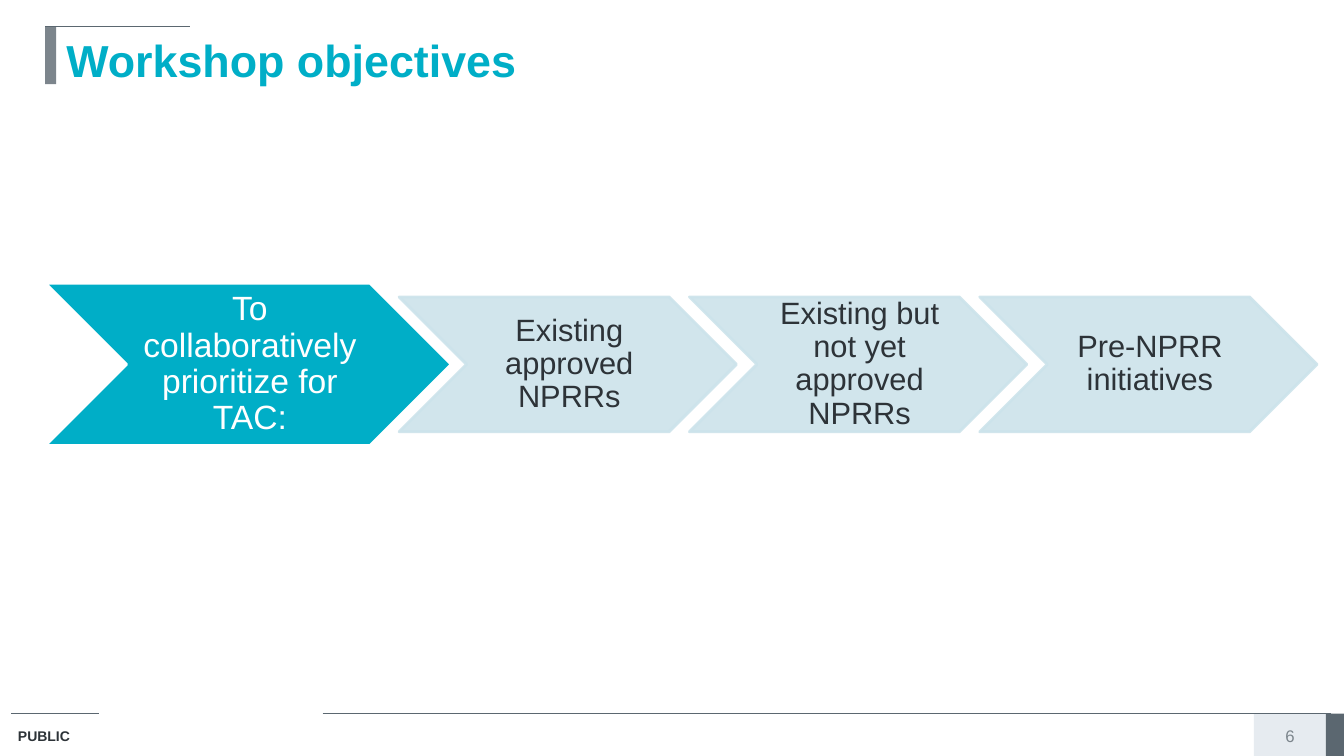
import pptx
import pptx.util
import pptx.dml.color
import pptx.enum.shapes
import pptx.enum.text
import pptx.oxml.ns
import lxml.etree

prs = pptx.Presentation()
prs.slide_width = pptx.util.Inches(13.33)
prs.slide_height = pptx.util.Inches(7.5)
s = prs.slides.add_slide(prs.slide_layouts[6])
COL, ROW = prs.slide_width / 100, prs.slide_height / 100
SHAPE = pptx.enum.shapes.MSO_SHAPE
ALIGN = pptx.enum.text.PP_ALIGN
ANCHOR = pptx.enum.text.MSO_ANCHOR
qn = pptx.oxml.ns.qn


def paint(color_format, color, alpha=100):
    color_format.rgb = pptx.dml.color.RGBColor.from_string(color)
    if alpha < 100:
        for clr in color_format._xFill.iter(qn("a:srgbClr")):
            lxml.etree.SubElement(clr, qn("a:alpha")).set("val", str(alpha * 1000))


def write(sp, text, color, font, align, frame):
    tf = sp.text_frame
    for name, value in {"word_wrap": True, **frame}.items():
        setattr(tf, name, value)
    p = tf.paragraphs[0]
    p.alignment = align
    r = p.add_run()
    r.text = text
    for name, value in {"name": "Arial", **font}.items():
        setattr(r.font, name, value)
    paint(r.font.color, color)
    return p


for x, y, w, h, color in [
    (93.3, 94.4, 5.85, 5.6, "E6EBF0"),
    (98.65, 94.4, 1.35, 5.6, "5B6770"),
    (3.35, 3.55, 0.83, 7.6, "7C858C"),
]:
    sp = s.shapes.add_shape(SHAPE.RECTANGLE, int(x * COL), int(y * ROW), int(w * COL), int(h * ROW))
    sp.shadow.inherit = False
    sp.fill.solid()
    paint(sp.fill.fore_color, color)
    sp.line.fill.background()

for x1, x2, y in [(0.83, 7.35, 94.4), (24, 99, 94.4), (3.35, 14.15, 3.55)]:
    cx = s.shapes.add_connector(
        pptx.enum.shapes.MSO_CONNECTOR.STRAIGHT, int(x1 * COL), int(y * ROW), int(x2 * COL), int(y * ROW)
    )
    cx.line.width = pptx.util.Pt(0.75)
    paint(cx.line.color, "5B6770")
    lxml.etree.SubElement(cx._element.spPr, qn("a:effectLst"))

for text, x, y, w, h, color, size, bold, align, anchor in [
    ("PUBLIC", 0.6, 95.6, 8.35, 3.7, "2D3338", 10, True, ALIGN.LEFT, ANCHOR.TOP),
    ("Workshop objectives", 4.2, 3.7, 93.3, 7.6, "00AEC7", 32, True, ALIGN.LEFT, ANCHOR.TOP),
    ("6", 93.3, 95.75, 5.35, 3.2, "7C858C", 12, False, ALIGN.CENTER, ANCHOR.MIDDLE),
]:
    sp = s.shapes.add_textbox(int(x * COL), int(y * ROW), int(w * COL), int(h * ROW))
    font = {"size": pptx.util.Pt(size), "bold": bold}
    write(sp, text, color, font, align, {"vertical_anchor": anchor})

steps = ["Existing approved NPRRs", "Existing but not yet approved NPRRs", "Pre-NPRR initiatives"]
chevrons = [("To collaboratively prioritize for TAC:", 3.38, 30.2, "00AEC7", "FFFFFF", 100, "FFFFFF", 24)]
for i, text in enumerate(steps):
    chevrons.append((text, 29.7 + 21.6 * i, 25.1, "CCE3EB", "CCE3EB", 90, "2D3338", 22))

frame = {
    "vertical_anchor": ANCHOR.MIDDLE,
    "margin_left": pptx.util.Inches(0.03),
    "margin_right": 0,
    "margin_top": pptx.util.Inches(0.02),
    "margin_bottom": pptx.util.Inches(0.02),
}
for text, x, w, fill, line, alpha, color, size in chevrons:
    width = int(w * COL)
    height = int(0.4 * width)
    sp = s.shapes.add_shape(SHAPE.CHEVRON, int(x * COL), int(48.2 * ROW - height / 2), width, height)
    sp.shadow.inherit = False
    sp.fill.solid()
    paint(sp.fill.fore_color, fill, alpha)
    sp.line.width = pptx.util.Pt(2)
    paint(sp.line.color, line, alpha)
    p = write(sp, text, color, {"size": pptx.util.Pt(size)}, ALIGN.CENTER, frame)
    p.line_spacing = 0.9

prs.save("out.pptx")
